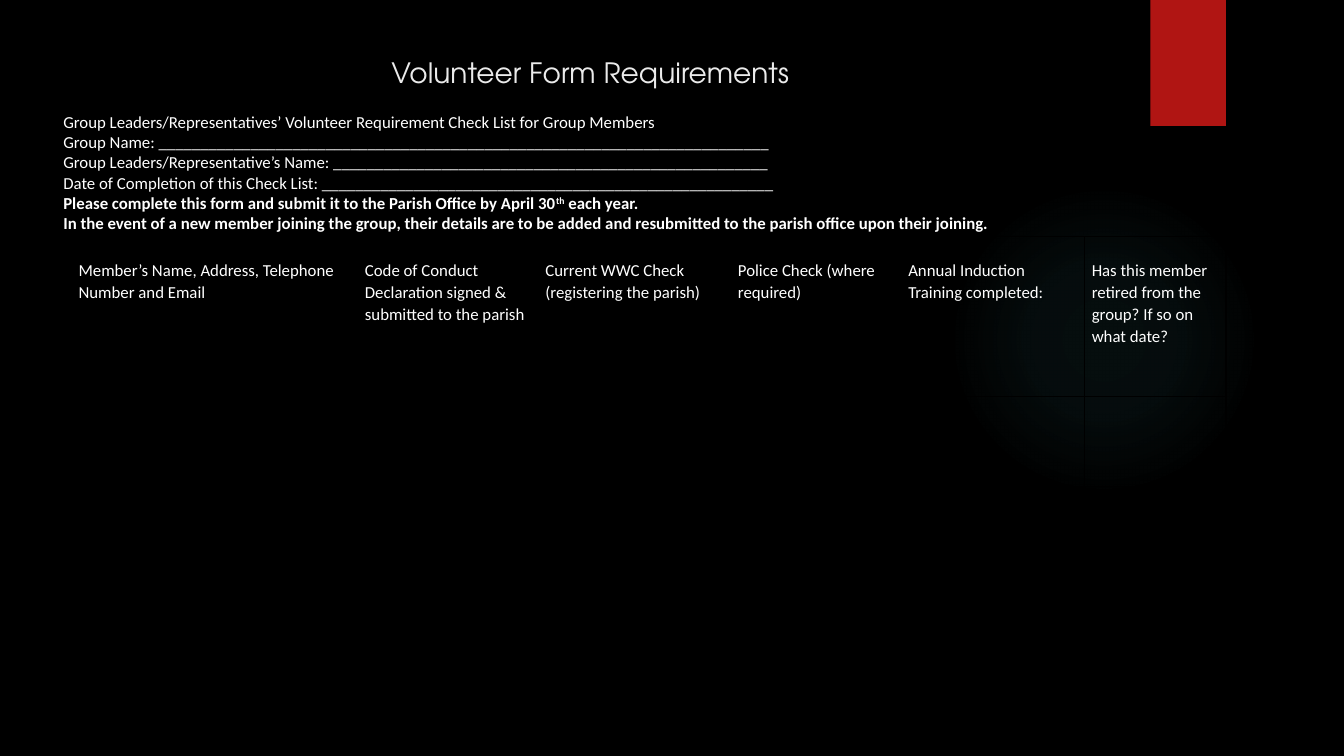
from lxml import etree
from pptx import Presentation
from pptx.dml.color import RGBColor
from pptx.enum.shapes import MSO_SHAPE
from pptx.enum.text import MSO_ANCHOR, MSO_AUTO_SIZE, PP_ALIGN
from pptx.oxml import parse_xml
from pptx.oxml.ns import nsdecls
from pptx.util import Inches, Pt


def paint(fill, color):
    fill.solid()
    fill.fore_color.rgb = RGBColor.from_string(color)


def style(font, size, name, color):
    font.size = Pt(size)
    font.name = name
    paint(font.fill, color)


prs = Presentation()
prs.slide_width, prs.slide_height = Inches(13.33), Inches(7.5)
s = prs.slides.add_slide(prs.slide_layouts[5])
paint(s.background.fill, "000000")

# Glow and red tab
glow = s.shapes.add_shape(MSO_SHAPE.OVAL, Inches(9.41), Inches(1.83), Inches(3.08), Inches(3.08))
glow.shadow.inherit = False
glow.line.fill.background()
stops = "".join(
    f'<a:gs pos="{pos}000"><a:srgbClr val="50B9C1"><a:alpha val="{alpha}000"/></a:srgbClr></a:gs>'
    for pos, alpha in [(0, 7), (36, 6), (69, 0)]
)
gradient = parse_xml(
    f'<a:gradFill {nsdecls("a")}><a:gsLst>{stops}</a:gsLst><a:path path="circle">'
    '<a:fillToRect l="50000" t="50000" r="50000" b="50000"/></a:path></a:gradFill>'
)
glow._element.spPr.insert(2, gradient)

tab = s.shapes.add_shape(MSO_SHAPE.RECTANGLE, Inches(11.41), 0, Inches(0.75), Inches(1.25))
tab.shadow.inherit = False
tab.line.fill.background()
paint(tab.fill, "B01513")

# Title
title = s.shapes.title
title.left, title.top, title.width, title.height = Inches(0.71), Inches(0.5), Inches(10.29), Inches(0.57)
tf = title.text_frame
tf.text = "Volunteer Form Requirements"
tf.vertical_anchor = MSO_ANCHOR.TOP
p = tf.paragraphs[0]
p.alignment = PP_ALIGN.CENTER
style(p.runs[0].font, 20, "TeX Gyre Adventor", "EBEBEB")

# Member table
headings = [
    "Member’s Name, Address, Telephone Number and Email",
    "Code of Conduct Declaration signed & submitted to the parish",
    "Current WWC Check (registering the parish)",
    "Police Check (where required)",
    "Annual Induction Training completed:",
    "Has this member retired from the group? If so on what date?",
]
widths = [2.84, 1.79, 1.91, 1.69, 1.82, 1.4]
heights = [1.58, 0.9, 0.83, 0.83, 0.83]
table = s.shapes.add_table(
    len(heights), len(widths), Inches(0.71), Inches(2.35), Inches(11.45), Inches(4.97)
).table
table.first_row = table.horz_banding = False
for column, width in zip(table.columns, widths):
    column.width = Inches(width)
for row, height in zip(table.rows, heights):
    row.height = Inches(height)
for cell in table.iter_cells():
    cell.margin_left = cell.margin_right = Inches(0.07)
    cell.margin_top = cell.margin_bottom = 0
    cell.fill.background()
    for i, side in enumerate(("lnL", "lnR", "lnT", "lnB")):
        border = parse_xml(
            f'<a:{side} {nsdecls("a")} w="12700"><a:solidFill><a:srgbClr val="000000"/></a:solidFill></a:{side}>'
        )
        cell._tc.get_or_add_tcPr().insert(i, border)
for cell, heading in zip(table.rows[0].cells, headings):
    cell.margin_top = Inches(0.22)
    cell.text = heading
    p = cell.text_frame.paragraphs[0]
    p.line_spacing = 1.07
    style(p.runs[0].font, 12, "Calibri", "FFFFFF")

# Form details: plain lines, then bold instructions
details = [
    "Group Leaders/Representatives’ Volunteer Requirement Check List for Group Members",
    "Group Name: " + "_" * 73,
    "Group Leaders/Representative’s Name: " + "_" * 52,
    "Date of Completion of this Check List: " + "_" * 54,
]
instructions = [
    ["Please complete this form and submit it to the Parish Office by April 30", "th", " each year."],
    ["In the event of a new member joining the group, their details are to be added "
     "and resubmitted to the parish office upon their joining."],
]
form = s.shapes.add_textbox(Inches(0.53), Inches(1.46), Inches(13.33), Inches(0.5))
tf = form.text_frame
tf.word_wrap = False
tf.auto_size = MSO_AUTO_SIZE.SHAPE_TO_FIT_TEXT
tf.vertical_anchor = MSO_ANCHOR.MIDDLE
lines = [([text], False) for text in details] + [(parts, True) for parts in instructions]
for i, (parts, bold) in enumerate(lines):
    p = tf.add_paragraph() if i else tf.paragraphs[0]
    for part in parts:
        r = p.add_run()
        r.text = part
        r.font.bold = bold
        style(r.font, 12, "Calibri", "FFFFFF")
        if part == "th":
            r.font._element.set("baseline", "30000")

prs.save("out.pptx")
